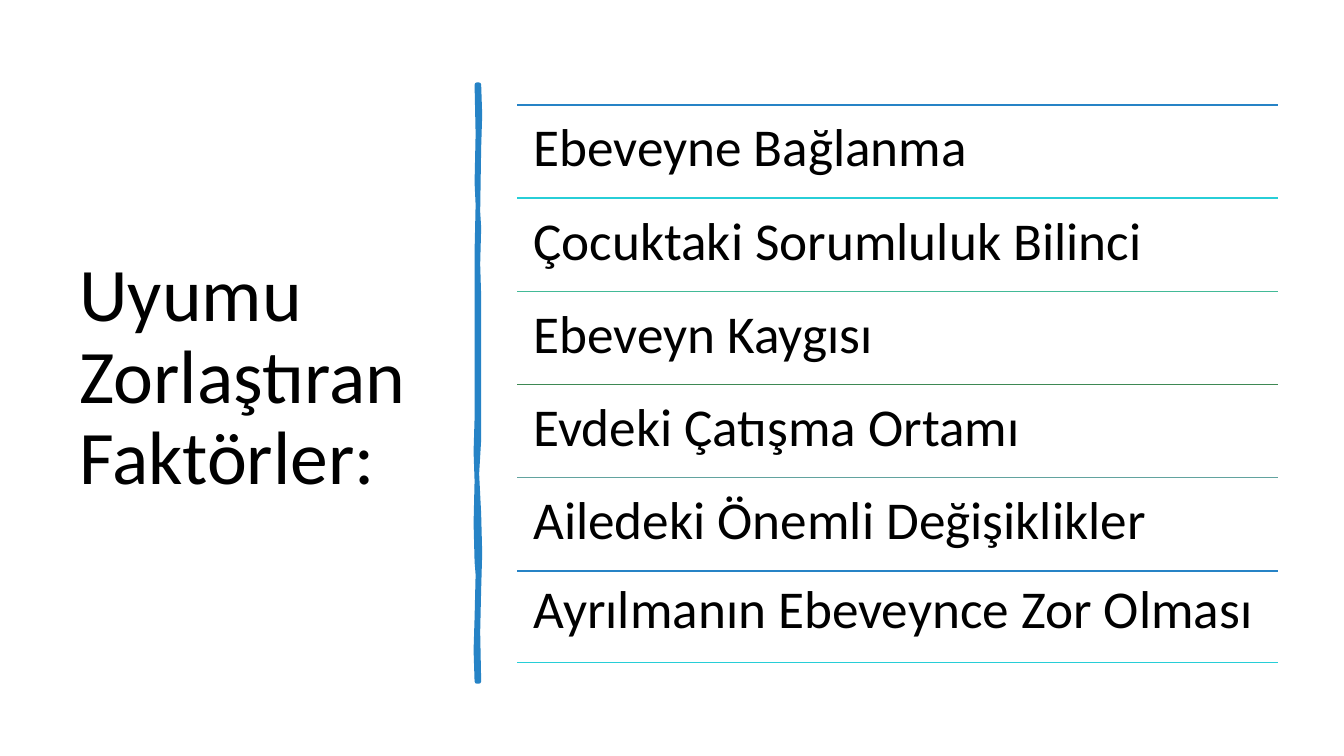
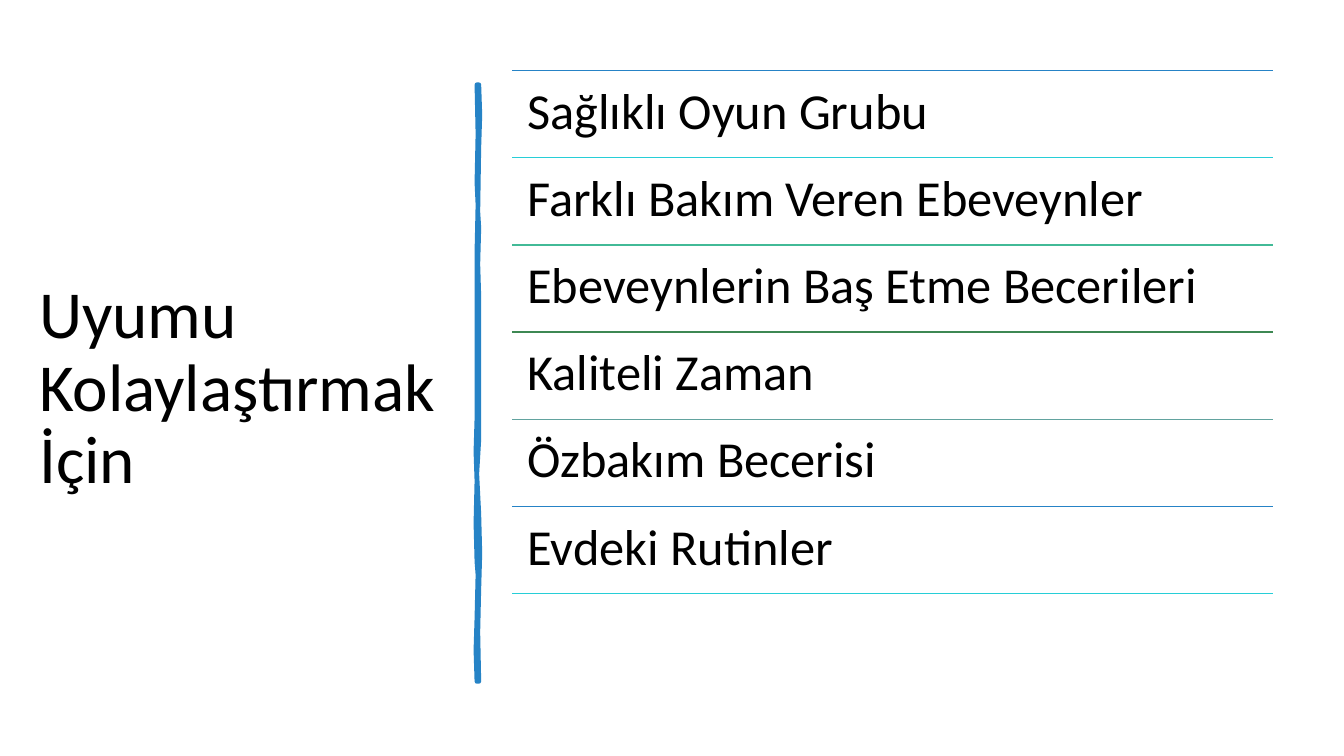
"""Build two slides with a title, a brushed divider and a ruled list."""
from lxml import etree
from pptx import Presentation
from pptx.dml.color import RGBColor
from pptx.enum.shapes import MSO_CONNECTOR
from pptx.enum.text import MSO_ANCHOR
from pptx.oxml.ns import qn
from pptx.util import Pt

PX = 9144
STRAIGHT = MSO_CONNECTOR.STRAIGHT
TOP, MIDDLE = MSO_ANCHOR.TOP, MSO_ANCHOR.MIDDLE

THEME = {
    "font": "Calibri",
    "ink": RGBColor.from_string("000000"),
    "brush": RGBColor.from_string("2683C6"),
    "rules": [RGBColor.from_string(c) for c in
              ("2683C6", "27CED7", "42BA97", "3E8853", "62A39F")],
    "rule_width": Pt(1),
    "brush_width": Pt(3.25),
    "line_spacing": 0.9,
}

BRUSH_START = (475, 84)
BRUSH_EDGE = [
    (476, 114), (475, 146), (474, 210), (475, 226), (474, 262), (475, 294),
    (475, 328), (475, 356), (475, 391), (475, 436), (473, 470), (475, 510),
    (476, 549), (475, 584), (474, 627), (475, 676), (473, 676), (472, 645),
    (473, 613), (474, 570), (473, 557), (472, 519), (473, 477), (472, 448),
    (473, 415), (473, 378), (473, 335), (473, 292), (473, 250), (474, 203),
    (473, 181), (474, 133), (473, 84),
]

SLIDES = [
    {
        "title": "Uyumu Zorlaştıran Faktörler:",
        "title_box": (69, 70, 374, 611), "title_size": Pt(54),
        "left": 513, "top": 104, "width": 755, "span": 555,
        "row_lift": 5, "rule_lift": 2, "inset": 16, "row_size": Pt(38),
        "rows": ["Ebeveyne Bağlanma", "Çocuktaki Sorumluluk Bilinci",
                 "Ebeveyn Kaygısı", "Evdeki Çatışma Ortamı",
                 "Ailedeki Önemli Değişiklikler",
                 "Ayrılmanın Ebeveynce Zor Olması"],
    },
    {
        "title": "Uyumu Kolaylaştırmak İçin",
        "title_box": (29, 37, 446, 699), "title_size": Pt(48),
        "left": 508, "top": 70, "width": 755, "span": 519,
        "row_lift": 0, "rule_lift": 0, "inset": 15, "row_size": Pt(36),
        "rows": ["Sağlıklı Oyun Grubu", "Farklı Bakım Veren Ebeveynler",
                 "Ebeveynlerin Baş Etme Becerileri", "Kaliteli Zaman",
                 "Özbakım Becerisi", "Evdeki Rutinler"],
    },
]


def emu(*lengths):
    return [round(length * PX) for length in lengths]


def add_text(shapes, box, text, size, anchor, inset_x, inset_y):
    tf = shapes.add_textbox(*emu(*box)).text_frame
    mx, my = emu(inset_x, inset_y)
    frame = {"word_wrap": True, "vertical_anchor": anchor, "margin_left": mx,
             "margin_right": mx, "margin_top": my, "margin_bottom": my}
    for name, value in frame.items():
        setattr(tf, name, value)
    p = tf.paragraphs[0]
    p.line_spacing = THEME["line_spacing"]
    r = p.add_run()
    r.text = text
    for name, value in {"name": THEME["font"], "size": size}.items():
        setattr(r.font, name, value)
    r.font.color.rgb = THEME["ink"]


prs = Presentation()
prs.slide_width, prs.slide_height = emu(1333, 750)

for data in SLIDES:
    s = prs.slides.add_slide(prs.slide_layouts[6])
    add_text(s.shapes, data["title_box"], data["title"], data["title_size"],
             MIDDLE, 10, 5)

    builder = s.shapes.build_freeform(*BRUSH_START, scale=PX)
    builder.add_line_segments(BRUSH_EDGE, close=True)
    sp = builder.convert_to_shape()
    sp.shadow.inherit = False
    sp.fill.solid()
    sp.fill.fore_color.rgb = THEME["brush"]
    sp.line.color.rgb = THEME["brush"]
    sp.line.width = THEME["brush_width"]

    group = s.shapes.add_group_shape()
    left, width, rows = data["left"], data["width"], data["rows"]
    last = len(rows) - 1
    pitch = data["span"] / len(rows)
    for i in range(len(rows) + 1):
        y = data["top"] + i * pitch
        rule_y = y - data["rule_lift"] * (i > last)
        rule = group.shapes.add_connector(
            STRAIGHT, *emu(left, rule_y, left + width, rule_y))
        rule.line.color.rgb = THEME["rules"][i % len(THEME["rules"])]
        rule.line.width = THEME["rule_width"]
        etree.SubElement(rule.element.spPr, qn("a:effectLst"))
        if i <= last:
            row_y = y - data["row_lift"] * (i == last)
            add_text(group.shapes, (left, row_y, width, pitch), rows[i],
                     data["row_size"], TOP, data["inset"], data["inset"])

prs.save("out.pptx")
